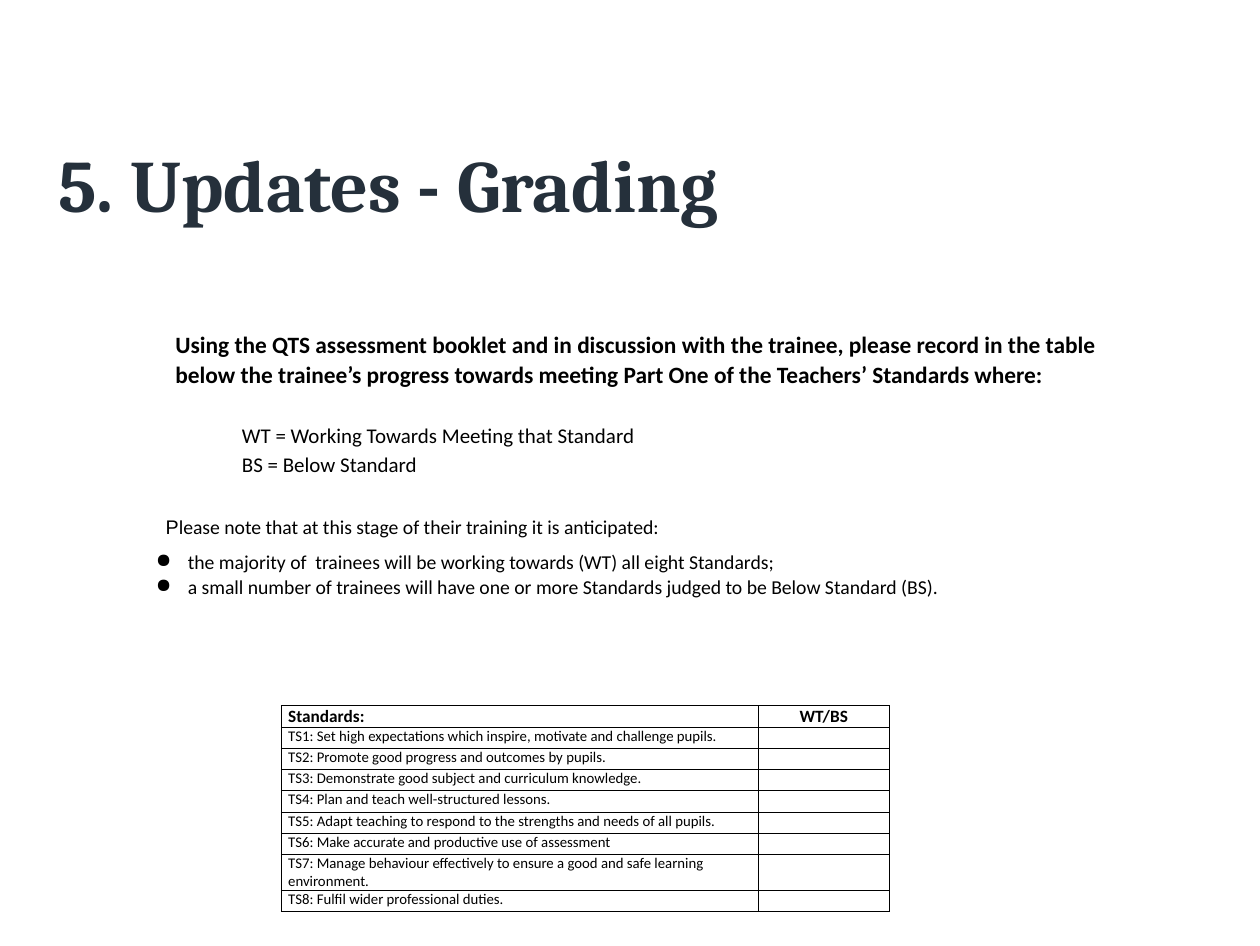
from lxml import etree
from pptx import Presentation
from pptx.dml.color import RGBColor
from pptx.enum.text import MSO_ANCHOR, PP_ALIGN
from pptx.oxml.ns import qn
from pptx.util import Inches, Pt

MIDDLE = MSO_ANCHOR.MIDDLE
LEFT, CENTER, JUSTIFY = PP_ALIGN.LEFT, PP_ALIGN.CENTER, PP_ALIGN.JUSTIFY
BLACK, NAVY = "000000", "25303B"
STANDARDS = [
    "Set high expectations which inspire, motivate and challenge pupils.",
    "Promote good progress and outcomes by pupils.",
    "Demonstrate good subject and curriculum knowledge.",
    "Plan and teach well-structured lessons.",
    "Adapt teaching to respond to the strengths and needs of all pupils.",
    "Make accurate and productive use of assessment",
    "Manage behaviour effectively to ensure a good and safe learning environment.",
    "Fulfil wider professional duties.",
]


def color(text):
    return RGBColor.from_string(text)


def add_run(para, text, size, bold=False, face="Calibri", tint=BLACK):
    run = para.add_run()
    run.text = text
    font = run.font
    font.size, font.bold, font.name = Pt(size), bold, face
    font.color.rgb = color(tint)


def add_box(slide, left, top, width, height, side, edge):
    """Add a wrapped, vertically centred text box and return its frame."""
    box = slide.shapes.add_textbox(*map(Inches, (left, top, width, height)))
    frame = box.text_frame
    frame.word_wrap = True
    frame.vertical_anchor = MIDDLE
    frame.margin_left = frame.margin_right = Inches(side)
    frame.margin_top = frame.margin_bottom = Inches(edge)
    return frame


def style(para, margin, indent=0, before=0, align=LEFT):
    para.line_spacing = 1.08
    para.space_before = Pt(before)
    para.alignment = align
    props = para._p.get_or_add_pPr()
    props.set("marL", str(Inches(margin)))
    props.set("indent", str(Inches(indent)))


def add_bullet(para):
    props = para._p.get_or_add_pPr()
    tint = etree.SubElement(props, qn("a:buClr"))
    etree.SubElement(tint, qn("a:srgbClr"), val=BLACK)
    etree.SubElement(props, qn("a:buChar"), char="●")


def add_title(slide):
    frame = add_box(slide, 0.52, 1.33, 12.79, 1.46, 0.14, 0.07)
    add_run(frame.paragraphs[0], "5. Updates - Grading", 60, True, "Cambria", NAVY)


def add_guide(slide):
    frame = add_box(slide, 1.38, 3.31, 11.45, 3.83, 0.1, 0.1)
    lead = frame.paragraphs[0]
    style(lead, 0.5)
    add_run(lead, "Using the QTS assessment booklet and in discussion with the "
            "trainee, please record in the table below the trainee’s progress "
            "towards meeting Part One of the Teachers’ Standards where:", 19, True)

    grades = [("WT = Working Towards Meeting that Standard", 26),
              ("BS = Below Standard", 2)]
    for text, before in grades:
        para = frame.add_paragraph()
        style(para, 1, 0.25, before)
        add_run(para, text, 17)

    note = frame.add_paragraph()
    style(note, 0.39, before=29)
    add_run(note, "P", 16, face="Arial")
    add_run(note, "lease note that at this stage of their training it is anticipated:", 16)

    points = [("the majority of  trainees will be working towards (WT) all eight "
               "Standards;", 8),
              ("a small number of trainees will have one or more Standards judged "
               "to be Below Standard (BS).", 0)]
    for text, before in points:
        para = frame.add_paragraph()
        style(para, 0.64, -0.36, before, JUSTIFY)
        add_bullet(para)
        add_run(para, text, 16)


def add_border(cell):
    props = cell._tc.get_or_add_tcPr()
    for side in ("lnL", "lnR", "lnT", "lnB"):
        line = etree.SubElement(props, qn(f"a:{side}"), w=str(Pt(0.5)))
        fill = etree.SubElement(line, qn("a:solidFill"))
        etree.SubElement(fill, qn("a:srgbClr"), val=BLACK)


def fill_cell(cell, text, size, bold=False, align=LEFT):
    cell.margin_left = cell.margin_right = Inches(0.08)
    cell.margin_top = cell.margin_bottom = 0
    add_border(cell)
    cell.fill.background()
    para = cell.text_frame.paragraphs[0]
    para.alignment = align
    if text:
        add_run(para, text, size, bold)
    else:
        # An empty cell needs its own text size to keep the row low.
        etree.SubElement(para._p, qn("a:endParaRPr"), sz=str(size * 100))


def add_grades(slide):
    count = len(STANDARDS) + 1
    place = map(Inches, (3.17, 7.96, 6.86, 0.24 * count))
    table = slide.shapes.add_table(count, 2, *place).table
    table.first_row = table.horz_banding = False
    for column, width in zip(table.columns, (5.38, 1.48)):
        column.width = Inches(width)
    fill_cell(table.cell(0, 0), "Standards:", 14, True)
    fill_cell(table.cell(0, 1), "WT/BS", 14, True, CENTER)
    for row, text in enumerate(STANDARDS, 1):
        fill_cell(table.cell(row, 0), f"TS{row}: {text}", 12)
        fill_cell(table.cell(row, 1), "", 12)


def main():
    deck = Presentation()
    deck.slide_width, deck.slide_height = Inches(14.21), Inches(10.67)
    slide = deck.slides.add_slide(deck.slide_layouts[6])
    add_title(slide)
    add_grades(slide)
    add_guide(slide)
    deck.save("out.pptx")


if __name__ == "__main__":
    main()
